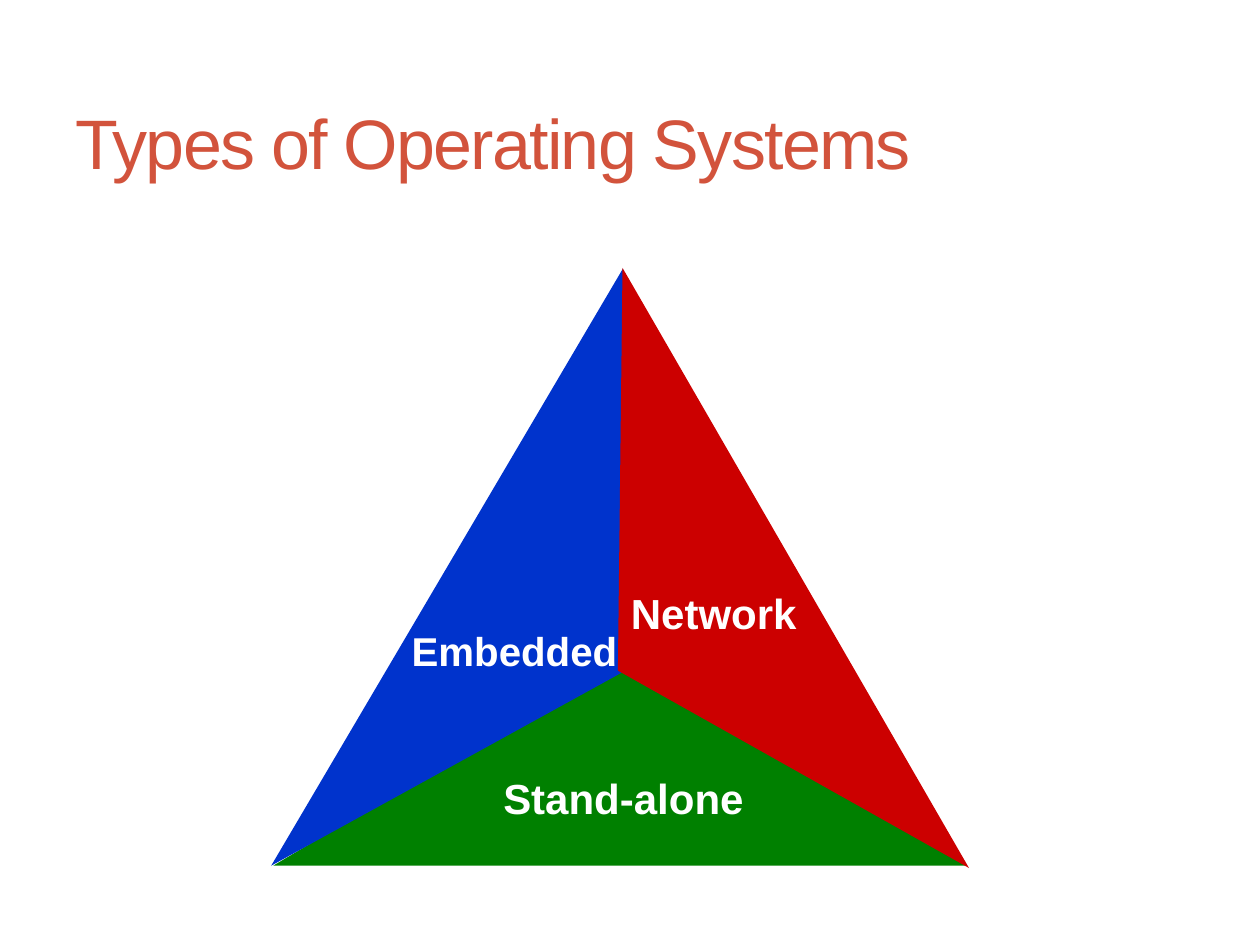
import pptx
import pptx.util
import pptx.dml.color
import pptx.enum.shapes
import pptx.enum.text

Pt = pptx.util.Pt
PP_ALIGN = pptx.enum.text.PP_ALIGN
MSO_ANCHOR = pptx.enum.text.MSO_ANCHOR

COLORS = {
    "title": "D2533C",
    "label": "FFFFFF",
    "green": "008000",
    "blue": "0033CC",
    "red": "CC0000",
}
FONT = "Arial"
HEADING = "Types of Operating Systems"
FACE_SIZE = (396, 117.36)
FACES = [
    {"label": "Stand-alone", "color": "green", "corner": (156.24, 377.28), "turn": 0,
     "label_box": (280.08, 437.76, 151.92, 36), "size": 24, "wrap": False},
    {"label": "Embedded", "color": "blue", "corner": (108, 295.2), "turn": 120.5,
     "label_box": (216.72, 354.24, 143.28, 34.56), "size": 23, "wrap": True},
    {"label": "Network", "color": "red", "corner": (205.92, 295.2), "turn": 240,
     "label_box": (352.8, 331.92, 109.44, 36), "size": 24, "wrap": False},
]


def rgb(key):
    return pptx.dml.color.RGBColor.from_string(COLORS[key])


def write(frame, text, size, color, align, bold=False):
    paragraph = frame.paragraphs[0]
    paragraph.alignment = align
    run = paragraph.add_run()
    run.text = text
    run.font.name = FONT
    run.font.size = Pt(size)
    run.font.bold = bold
    run.font.color.rgb = rgb(color)
    return run


def add_face(slide, face):
    triangle = slide.shapes.add_shape(
        pptx.enum.shapes.MSO_SHAPE.ISOSCELES_TRIANGLE,
        *map(Pt, face["corner"] + FACE_SIZE))
    triangle.rotation = face["turn"]
    triangle.shadow.inherit = False
    triangle.fill.solid()
    triangle.fill.fore_color.rgb = rgb(face["color"])
    triangle.line.fill.background()

    label = slide.shapes.add_textbox(*map(Pt, face["label_box"]))
    label.text_frame.word_wrap = face["wrap"]
    label.text_frame.auto_size = pptx.enum.text.MSO_AUTO_SIZE.SHAPE_TO_FIT_TEXT
    write(label.text_frame, face["label"], face["size"], "label", PP_ALIGN.RIGHT, True)


def main():
    deck = pptx.Presentation()
    deck.slide_width, deck.slide_height = Pt(720), Pt(540)
    slide = deck.slides.add_slide(deck.slide_layouts[5])

    title = slide.shapes.title
    title.left, title.top, title.width, title.height = map(Pt, (36, 41.76, 648, 77.76))
    title.text_frame.vertical_anchor = MSO_ANCHOR.MIDDLE
    heading = write(title.text_frame, HEADING, 40, "title", PP_ALIGN.LEFT)
    heading.font._element.set("spc", "-100")

    for face in FACES:
        add_face(slide, face)
    deck.save("out.pptx")


if __name__ == "__main__":
    main()
